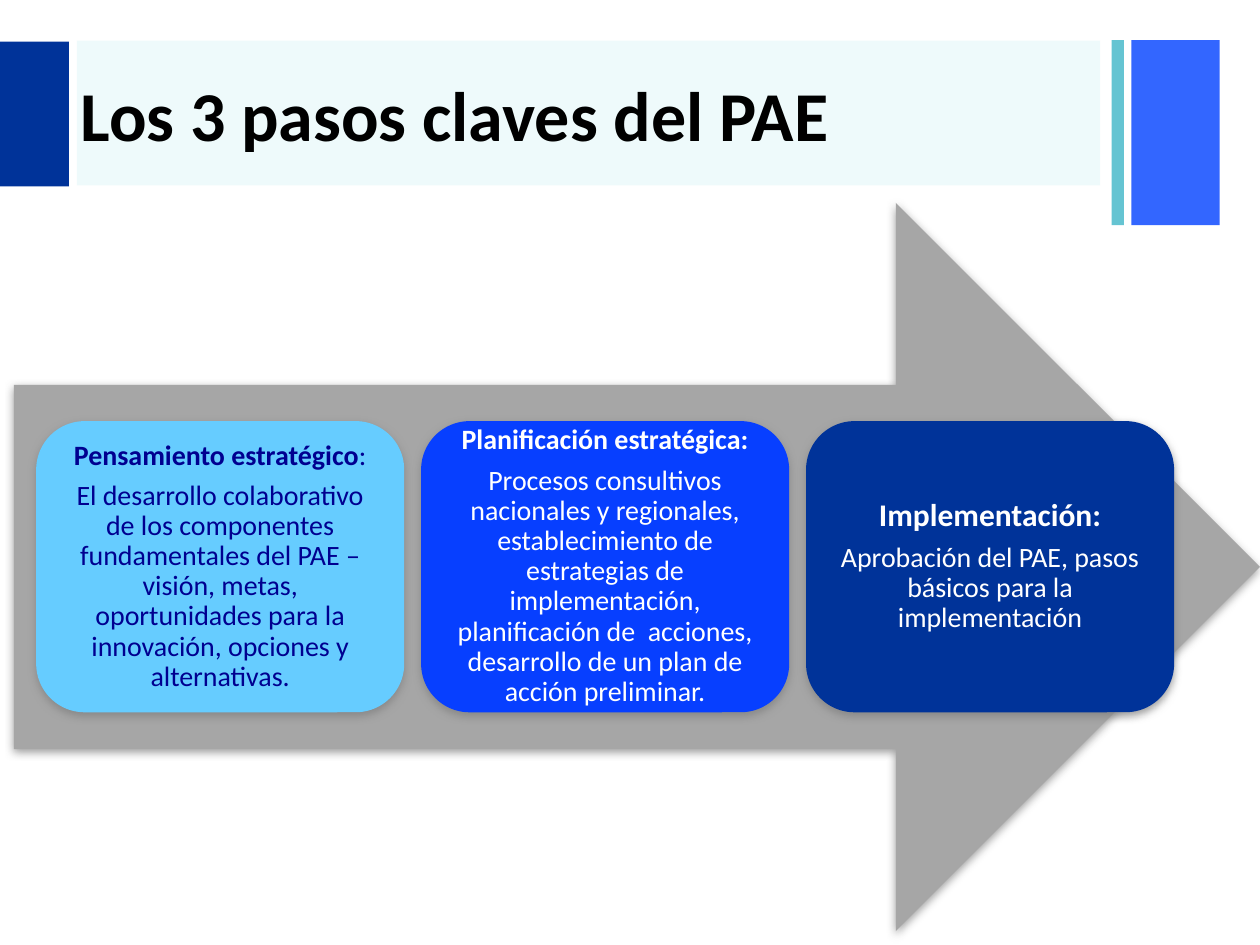
from lxml.etree import SubElement
from pptx import Presentation
from pptx.dml.color import RGBColor
from pptx.enum.shapes import MSO_SHAPE as Shape
from pptx.enum.text import MSO_ANCHOR as Anchor, PP_ALIGN as Align
from pptx.oxml import parse_xml
from pptx.oxml.ns import nsdecls, qn
from pptx.util import Cm, Pt

SHADOW = (
    f'<a:effectLst {nsdecls("a")}><a:outerShdw blurRad="63500" dist="25400" dir="5400000" '
    'rotWithShape="0"><a:srgbClr val="808080"><a:alpha val="75000"/></a:srgbClr>'
    '</a:outerShdw></a:effectLst>'
)


def add_block(slide, kind, left, top, width, height, color, shadow=False):
    block = slide.shapes.add_shape(kind, Cm(left), Cm(top), Cm(width), Cm(height))
    block.fill.solid()
    block.fill.fore_color.rgb = RGBColor.from_string(color)
    block.line.fill.background()
    block.shadow.inherit = False
    if shadow:
        properties = block.element.spPr
        properties.replace(properties.find(qn("a:effectLst")), parse_xml(SHADOW))
    return block


def add_text(para, text, size=16, color="000000", bold=False):
    span = para.add_run()
    span.text = text
    span.font.name = "Calibri"
    span.font.size = Pt(size)
    span.font.bold = bold
    span.font.color.rgb = RGBColor.from_string(color)


deck = Presentation()
deck.slide_width, deck.slide_height = Cm(25.4), Cm(19.05)
page = deck.slides.add_slide(deck.slide_layouts[5])

add_block(page, Shape.RECTANGLE, 22.81, 0.81, 1.78, 3.73, "3366FF")
add_block(page, Shape.RECTANGLE, 22.41, 0.81, 0.25, 3.73, "65C4D2")
add_block(page, Shape.RECTANGLE, 0, 0.84, 1.39, 2.92, "003399")
title_band = add_block(page, Shape.RECTANGLE, 1.55, 0.82, 20.63, 2.92, "14C5D0")
band_color = title_band.element.spPr.find(qn("a:solidFill"))[0]
SubElement(band_color, qn("a:alpha"), val="7000")

title = page.shapes.title
title.left, title.top, title.width, title.height = Cm(1.37), Cm(0.86), Cm(21), Cm(2.85)
title.text_frame.vertical_anchor = Anchor.MIDDLE
title_para = title.text_frame.paragraphs[0]
title_para.alignment = Align.LEFT
add_text(title_para, "Los 3 pasos claves del PAE", size=40, bold=True)
title.element.getparent().append(title.element)

add_block(page, Shape.RIGHT_ARROW, 0.28, 4.09, 25.12, 14.68, "A6A6A6", shadow=True)

steps = [
    ("66CCFF", "000090", 16, "Pensamiento estratégico", ":",
     "El desarrollo colaborativo de los componentes fundamentales del PAE – visión, "
     "metas, oportunidades para la innovación, opciones y alternativas."),
    ("073FFF", "FFFFFF", 16, "Planificación estratégica:", "",
     "Procesos consultivos nacionales y regionales, establecimiento de estrategias de "
     "implementación, planificación de  acciones, desarrollo de un plan de acción preliminar."),
    ("003399", "FFFFFF", 18, "Implementación:", "",
     "Aprobación del PAE, pasos básicos para la implementación"),
]
for index, (fill, ink, heading_size, heading, suffix, body) in enumerate(steps):
    box = add_block(page, Shape.ROUNDED_RECTANGLE, 0.73 + 7.76 * index, 8.49, 7.42, 5.87,
                    fill, shadow=True)
    frame = box.text_frame
    frame.word_wrap = True
    frame.vertical_anchor = Anchor.MIDDLE
    frame.margin_left = frame.margin_right = Cm(0.18)
    frame.margin_top = frame.margin_bottom = Cm(0.18)
    heading_para, body_para = frame.paragraphs[0], frame.add_paragraph()
    for para in (heading_para, body_para):
        para.alignment = Align.CENTER
        para.line_spacing = 0.9
        para.space_after = Pt(5.6)
    add_text(heading_para, heading, size=heading_size, color=ink, bold=True)
    if suffix:
        add_text(heading_para, suffix, color=ink)
    add_text(body_para, body, color=ink)

deck.save("out.pptx")
